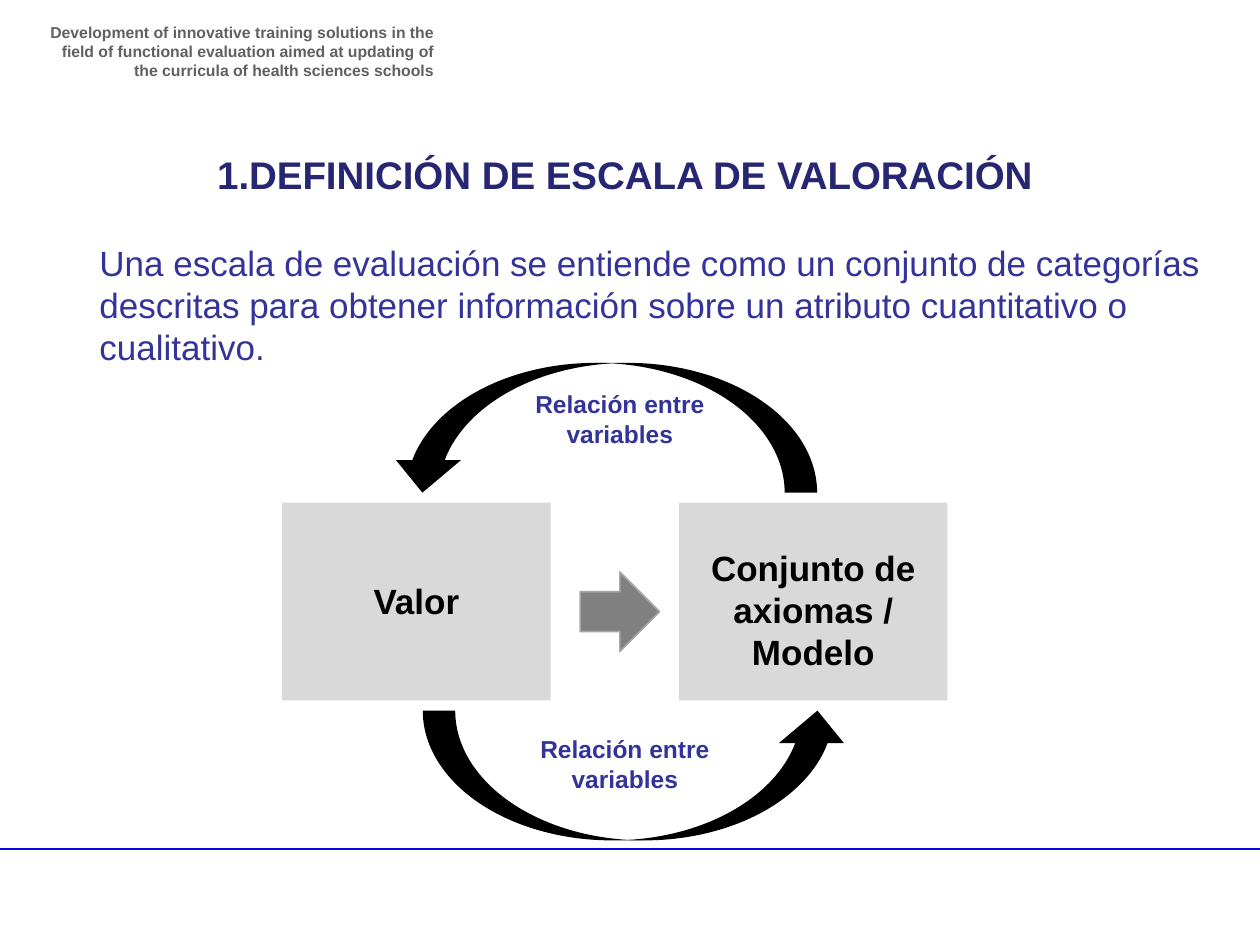
from dataclasses import dataclass
from lxml.etree import SubElement
from pptx import Presentation
from pptx.dml.color import RGBColor
from pptx.enum.shapes import MSO_CONNECTOR as Conn, MSO_SHAPE as Shape
from pptx.enum.text import PP_ALIGN as Align
from pptx.oxml.ns import qn
from pptx.util import Inches, Pt


@dataclass(frozen=True)
class Theme:
    font: str = "Arial"
    title: str = "262673"
    body: str = "333399"
    head: str = "606060"
    ink: str = "000000"
    card: str = "D9D9D9"
    arrow: str = "808080"
    edge: str = "A6A6A6"
    rule: str = "0404E6"
    small: int = 9
    label: int = 14
    text: int = 20
    large: int = 22


T = Theme()
WIDE, HIGH = 10, 7.5

# Text, box (left, top, width, height), size, colour, bold, alignment
HEADS = [
    ("Development of innovative training solutions in the ﬁeld of functional "
     "evaluation aimed at updating of the curricula of health sciences schools",
     (0.28, 0.13, 3.26, 0.47), T.small, T.head, True, Align.RIGHT),
    ("1.DEFINICIÓN DE ESCALA DE VALORACIÓN",
     (0.67, 1.15, 8.58, 0.47), T.large, T.title, True, Align.CENTER),
    ("Una escala de evaluación se entiende como un conjunto de categorías "
     "descritas para obtener información sobre un atributo cuantitativo o "
     "cualitativo.",
     (0.69, 1.87, 9.11, 1.11), T.text, T.body, False, Align.LEFT),
]
# Lines of text, drop from the card's top, text height
CARDS = [
    (["Valor"], 0.56, 0.44),
    (["Conjunto de axiomas /", "Modelo"], 0.3, 1.11),
]
LINK = "Relación entre variables"

# Two cards in a row, with a loop arrow above and below
LEFT, TOP = 2.24, 3.99
CARD_W, CARD_H = 2.13, 1.57
STEP = 3.15
AXIS = 4.92
ARROW = 0.63
LOOP_W, LOOP_H = 3.39, 1.03
LEAN, GAP = 0.13, 0.08
# Side of the axis, top, turn, label's shift and drop
LOOPS = [
    (1, TOP + CARD_H + GAP, 0, 0.04, 0.14),
    (-1, TOP - GAP - LOOP_H, 180, 0, 0.16),
]
RULE_Y = 0.9 * HIGH - 0.01


def rgb(code):
    return RGBColor.from_string(code)


def add_text(slide, lines, box, size, color, bold, align):
    frame = slide.shapes.add_textbox(*map(Inches, box)).text_frame
    frame.word_wrap = True
    for i, line in enumerate(lines):
        para = frame.paragraphs[0] if i == 0 else frame.add_paragraph()
        para.alignment = align
        run = para.add_run()
        run.text = line
        font = run.font
        font.name, font.size, font.bold = T.font, Pt(size), bold
        font.color.rgb = rgb(color)


def add_form(slide, kind, box, fill, edge=None, turn=0):
    form = slide.shapes.add_shape(kind, *map(Inches, box))
    form.shadow.inherit = False
    form.rotation = turn
    form.fill.solid()
    form.fill.fore_color.rgb = rgb(fill)
    if edge:
        form.line.color.rgb = rgb(edge)
        form.line.width = Pt(1)
    else:
        form.line.fill.background()


def add_rule(slide):
    rule = slide.shapes.add_connector(
        Conn.STRAIGHT, Inches(-0.05), Inches(RULE_Y), Inches(WIDE), Inches(RULE_Y))
    rule.line.color.rgb = rgb(T.rule)
    rule.line.width = Pt(1)
    SubElement(rule._element.spPr, qn("a:effectLst"))


def main():
    deck = Presentation()
    deck.slide_width, deck.slide_height = Inches(WIDE), Inches(HIGH)
    slide = deck.slides.add_slide(deck.slide_layouts[6])

    add_rule(slide)
    for text, *look in HEADS:
        add_text(slide, [text], *look)

    for col, (lines, drop, tall) in enumerate(CARDS):
        x = LEFT + col * STEP
        add_form(slide, Shape.RECTANGLE, (x, TOP, CARD_W, CARD_H), T.card)
        add_text(slide, lines, (x, TOP + drop, CARD_W, tall),
                 T.text, T.ink, True, Align.CENTER)

    mid = TOP + CARD_H / 2 + GAP - ARROW / 2
    add_form(slide, Shape.RIGHT_ARROW, (AXIS - ARROW / 2, mid, ARROW, ARROW),
             T.arrow, T.edge)

    for side, y, turn, shift, drop in LOOPS:
        x = AXIS + side * LEAN - LOOP_W / 2
        add_form(slide, Shape.CURVED_UP_ARROW, (x, y, LOOP_W, LOOP_H),
                 T.ink, turn=turn)
        add_text(slide, [LINK], (AXIS + shift - CARD_W / 2, y + drop, CARD_W, 0.57),
                 T.label, T.body, True, Align.CENTER)

    deck.save("out.pptx")


if __name__ == "__main__":
    main()
